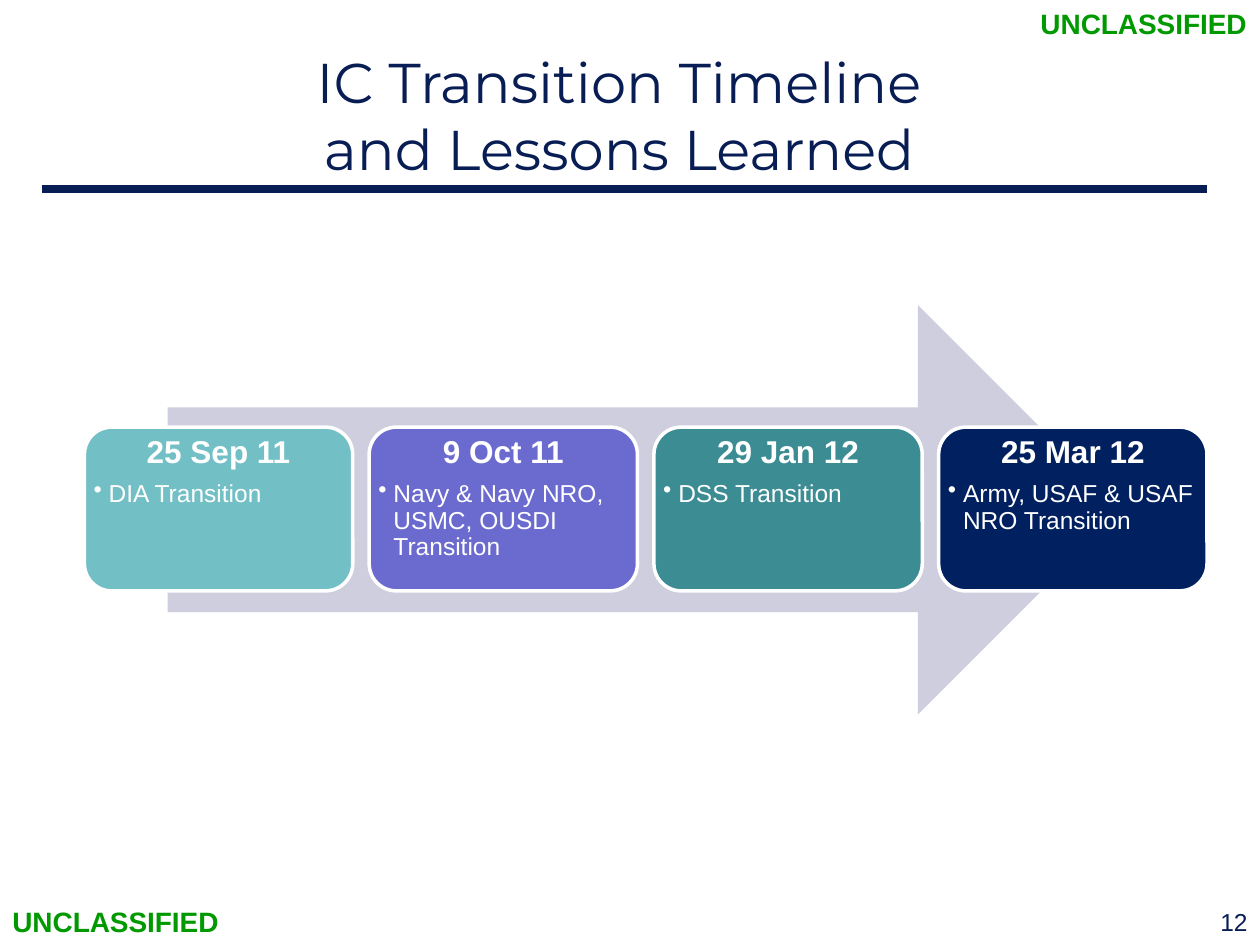
from lxml.etree import SubElement
from pptx import Presentation
from pptx.dml.color import RGBColor
from pptx.enum.shapes import MSO_CONNECTOR, MSO_SHAPE
from pptx.enum.text import MSO_ANCHOR, PP_ALIGN
from pptx.oxml.ns import qn
from pptx.util import Inches, Pt

NAVY = "081D54"
GREEN = "009900"
WHITE = "FFFFFF"

MILESTONES = [
    ("25 Sep 11", "DIA Transition", "72BFC5"),
    ("9 Oct 11", "Navy & Navy NRO, USMC, OUSDI Transition", "6B6BCF"),
    ("29 Jan 12", "DSS Transition", "3C8C93"),
    ("25 Mar 12", "Army, USAF & USAF NRO Transition", "002060"),
]


def color(value):
    return RGBColor.from_string(value)


def format_runs(paragraph, size, hex_color, bold=False, name="Arial"):
    for run in paragraph.runs:
        run.font.size = Pt(size)
        run.font.name = name
        run.font.bold = bold
        run.font.color.rgb = color(hex_color)


def add_text(slide, box, text, size, hex_color, align=PP_ALIGN.LEFT,
             anchor=MSO_ANCHOR.TOP, wrap=True, bold=False, name="Arial"):
    shape = slide.shapes.add_textbox(*map(Inches, box))
    frame = shape.text_frame
    frame.word_wrap = wrap
    frame.vertical_anchor = anchor
    paragraph = frame.paragraphs[0]
    paragraph.text = text
    paragraph.alignment = align
    format_runs(paragraph, size, hex_color, bold, name)


def add_filled_shape(slide, kind, box, fill):
    shape = slide.shapes.add_shape(kind, *map(Inches, box))
    shape.shadow.inherit = False
    shape.fill.solid()
    shape.fill.fore_color.rgb = color(fill)
    shape.line.fill.background()
    return shape


def add_rule(slide, left, right, top):
    rule = slide.shapes.add_connector(
        MSO_CONNECTOR.STRAIGHT, Inches(left), Inches(top), Inches(right), Inches(top))
    rule.line.color.rgb = color(NAVY)
    rule.line.width = Pt(4.5)
    SubElement(rule._element.spPr, qn("a:effectLst"))


def set_bullet(paragraph, indent):
    properties = paragraph._p.get_or_add_pPr()
    properties.set("marL", str(Inches(indent)))
    properties.set("indent", str(-Inches(indent)))
    SubElement(properties, qn("a:buChar")).set("char", "•")


def add_milestone(slide, box, date, event, fill):
    card = add_filled_shape(slide, MSO_SHAPE.ROUNDED_RECTANGLE, box, fill)
    card.line.color.rgb = color(WHITE)
    card.line.width = Pt(2)

    frame = card.text_frame
    frame.word_wrap = True
    frame.vertical_anchor = MSO_ANCHOR.TOP
    frame.margin_left = frame.margin_right = Inches(0.01)
    frame.margin_top = frame.margin_bottom = Inches(0.01)

    heading = frame.paragraphs[0]
    heading.text = date
    heading.alignment = PP_ALIGN.CENTER
    heading.line_spacing = 0.9
    heading.space_after = Pt(6.3)
    format_runs(heading, 18, WHITE, bold=True)

    detail = frame.add_paragraph()
    detail.text = event
    detail.level = 1
    detail.alignment = PP_ALIGN.LEFT
    detail.line_spacing = 0.9
    set_bullet(detail, 0.12)
    format_runs(detail, 14, WHITE)


def main():
    presentation = Presentation()
    presentation.slide_width = Inches(10)
    presentation.slide_height = Inches(7.5)
    slide = presentation.slides.add_slide(presentation.slide_layouts[6])

    # Header rule and classification markings
    add_rule(slide, 0.33, 9.58, 1.5)
    for left, top in ((8.16, 0), (0, 7.13)):
        add_text(slide, (left, top, 1.84, 0.37), "UNCLASSIFIED", 16, GREEN,
                 wrap=False, bold=True)

    # Title and slide number
    add_text(slide, (1.83, 0.3, 6.17, 1.22),
             "IC Transition Timeline\vand Lessons Learned", 32, NAVY,
             PP_ALIGN.CENTER, MSO_ANCHOR.MIDDLE, name="Montserrat")
    add_text(slide, (7.67, 7.15, 2.33, 0.35), "12", 14, NAVY, PP_ALIGN.RIGHT)

    # Timeline arrow with evenly spaced milestones
    add_filled_shape(slide, MSO_SHAPE.RIGHT_ARROW, (1.33, 2.42, 7.58, 3.25), "CECEDE")
    for index, (date, event, fill) in enumerate(MILESTONES):
        add_milestone(slide, (0.67 + index * 2.26, 3.39, 2.13, 1.3), date, event, fill)

    presentation.save("out.pptx")


if __name__ == "__main__":
    main()
